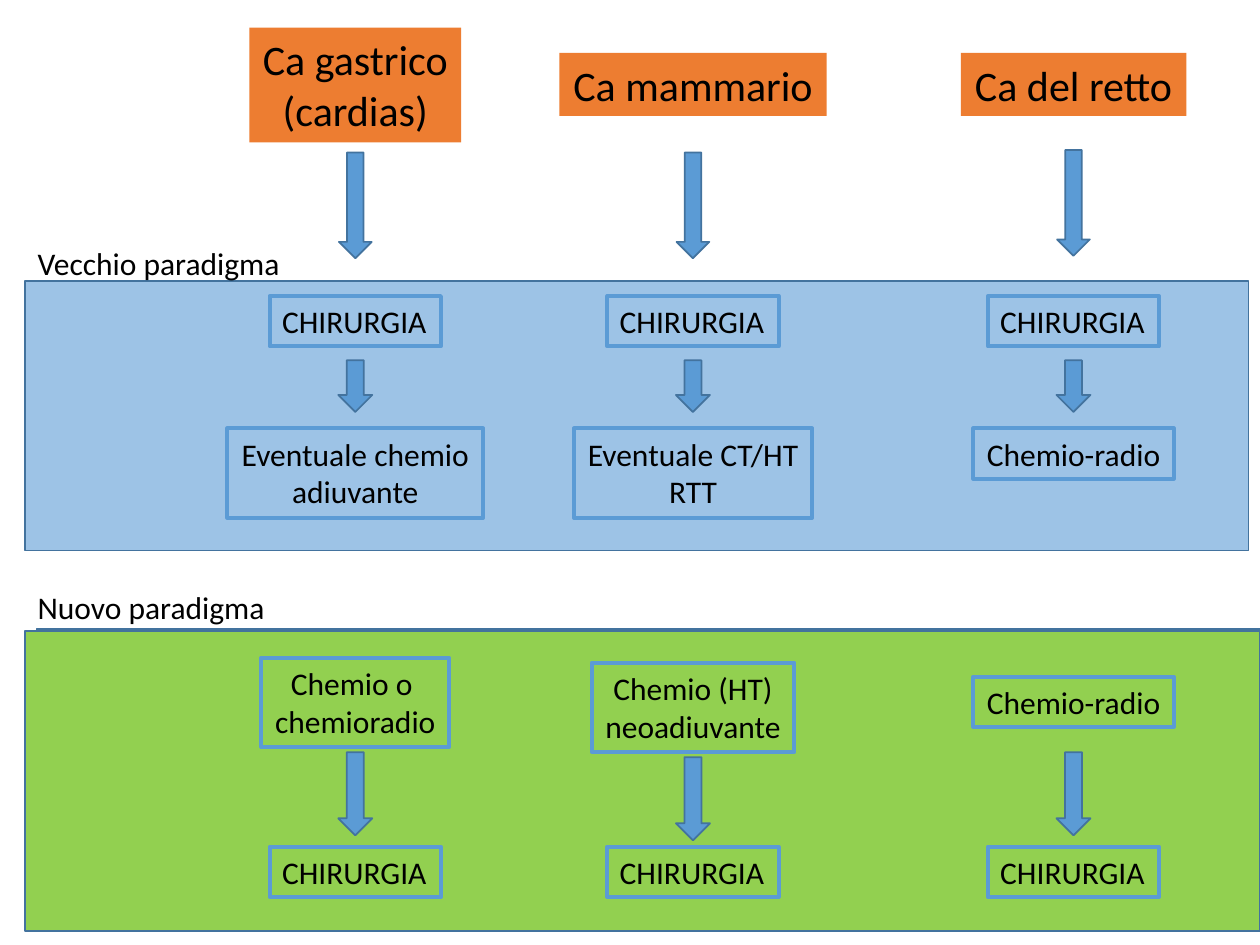
from pptx import Presentation, util as u
from pptx.dml.color import RGBColor
from pptx.enum import shapes, text

THEME = {
    "font": "Calibri", "heading": 24, "body": 18,
    "text": "000000", "orange": "ED7D31", "blue": "5B9BD5",
    "edge": "43739E", "old": "9DC3E6", "new": "92D050",
}
CENTRE, LEFT = text.PP_ALIGN.CENTER, text.PP_ALIGN.LEFT
COLUMN_CENTRES = (2.82, 5.5, 8.52)
BOX_HEIGHTS = {("heading", 1): 0.5, ("heading", 2): 0.91,
               ("body", 1): 0.4, ("body", 2): 0.71}

PANELS = [
    ("new", 0.29, 4.99, 9.71, 2.38),
    ("new", 0.2, 5.01, 9.8, 2.38),
    ("old", 0.2, 2.23, 9.71, 2.14),
]
TUMOURS = [
    (["Ca gastrico", "(cardias)"], 1.68, 0.22),
    (["Ca mammario"], 2.12, 0.42),
    (["Ca del retto"], 1.79, 0.42),
]
ADJUVANT = [
    (["Eventuale chemio", "adiuvante"], 2.03, 3.4),
    (["Eventuale CT/HT", "RTT"], 1.89, 3.4),
    (["Chemio-radio"], 1.59, 3.4),
]
NEOADJUVANT = [
    (["Chemio o ", "chemioradio"], 1.49, 5.22),
    (["Chemio (HT)", "neoadiuvante"], 1.61, 5.26),
    (["Chemio-radio"], 1.59, 5.37),
]
SURGERY_TOPS = (2.35, 6.72)
ARROW_ROWS = [
    ((1.21, 1.21, 1.19), 0.26, 0.84),
    ((2.86, 2.86, 2.86), 0.27, 0.41),
    ((5.97, 6.01, 5.97), 0.27, 0.66),
]
LABELS = [("Vecchio paradigma", 1.89, 2.15), ("Nuovo paradigma", 4.62, 2.02)]


def colour(name):
    return RGBColor.from_string(THEME[name])


def add_shape(slide, kind, left, top, width, height, fill=None, line=None, weight=1):
    shape = slide.shapes.add_shape(kind, *map(u.Inches, (left, top, width, height)))
    shape.shadow.inherit = False
    if fill:
        shape.fill.solid()
        shape.fill.fore_color.rgb = colour(fill)
    else:
        shape.fill.background()
    if line:
        shape.line.color.rgb = colour(line)
        shape.line.width = u.Pt(weight)
    else:
        shape.line.fill.background()
    return shape


def write(shape, lines, size, align):
    frame = shape.text_frame
    frame.word_wrap = False
    frame.auto_size = text.MSO_AUTO_SIZE.SHAPE_TO_FIT_TEXT
    frame.vertical_anchor = text.MSO_ANCHOR.TOP
    for index, line in enumerate(lines):
        paragraph = frame.add_paragraph() if index else frame.paragraphs[0]
        paragraph.alignment = align
        run = paragraph.add_run()
        run.text = line
        run.font.name = THEME["font"]
        run.font.size = u.Pt(THEME[size])
        run.font.color.rgb = colour("text")


def add_box_row(slide, boxes, size="body", align=CENTRE, fill=None, line="blue"):
    for centre, (lines, width, top) in zip(COLUMN_CENTRES, boxes):
        height = BOX_HEIGHTS[size, len(lines)]
        box = add_shape(slide, shapes.MSO_SHAPE.RECTANGLE, centre - width / 2, top,
                        width, height, fill, line, 2.25)
        write(box, lines, size, align)


def main():
    presentation = Presentation()
    presentation.slide_width, presentation.slide_height = u.Inches(10), u.Inches(7.5)
    slide = presentation.slides.add_slide(presentation.slide_layouts[6])

    for fill, *place in PANELS:
        add_shape(slide, shapes.MSO_SHAPE.RECTANGLE, *place, fill, "edge")

    add_box_row(slide, TUMOURS, "heading", fill="orange", line=None)
    for top in SURGERY_TOPS:
        add_box_row(slide, [(["CHIRURGIA"], 1.36, top)] * 3, align=LEFT)
    add_box_row(slide, ADJUVANT)
    add_box_row(slide, NEOADJUVANT)

    for tops, width, height in ARROW_ROWS:
        for centre, top in zip(COLUMN_CENTRES, tops):
            add_shape(slide, shapes.MSO_SHAPE.DOWN_ARROW, centre - width / 2, top,
                      width, height, "blue", "edge")

    for label, top, width in LABELS:
        place = (0.2, top, width, BOX_HEIGHTS["body", 1])
        write(slide.shapes.add_textbox(*map(u.Inches, place)), [label], "body", LEFT)

    presentation.save("out.pptx")


if __name__ == "__main__":
    main()
